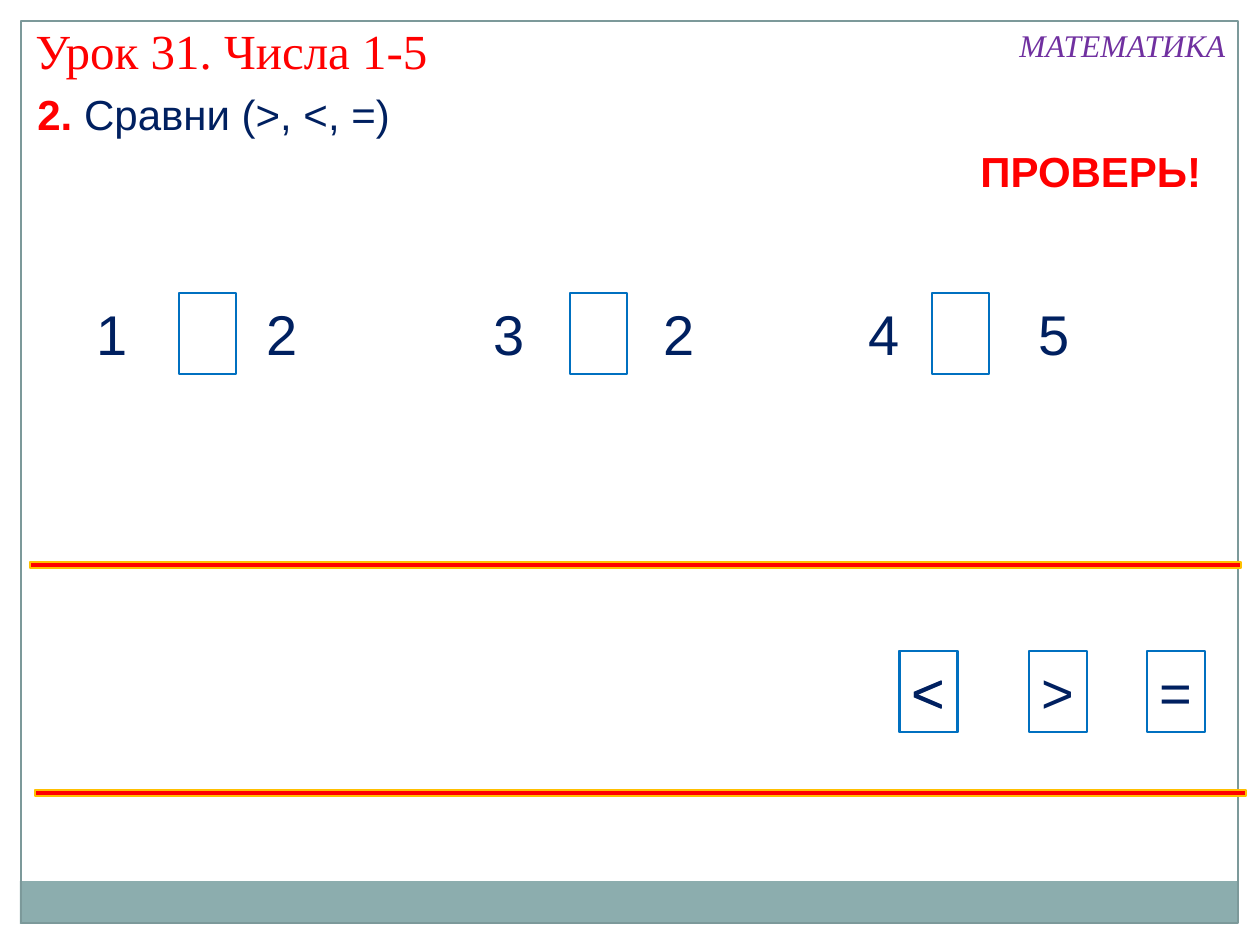
from lxml.etree import SubElement
from pptx import Presentation
from pptx.dml.color import RGBColor
from pptx.enum.shapes import MSO_SHAPE as SHAPE
from pptx.enum.text import MSO_ANCHOR as ANCHOR, PP_ALIGN as ALIGN
from pptx.oxml.ns import qn
from pptx.util import Emu, Pt

PX_PER_INCH = 126
NAVY, RED, BLUE, PURPLE = "002060", "FF0000", "0070C0", "7030A0"
GOLD, WHITE, TEAL, GREY = "FFC000", "FFFFFF", "8CADAE", "7C999A"
SANS, SERIF = "Arial", "Times New Roman"


def px(n):
    return Emu(round(n * 914400 / PX_PER_INCH))


def rgb(color):
    return RGBColor.from_string(color)


class Board:
    """Holds the current slide and the lesson's style."""

    def __init__(self, slide):
        self.shapes = slide.shapes

    def rect(self, x, y, w, h, fill=None, line=None, width=0.75):
        s = self.shapes.add_shape(SHAPE.RECTANGLE, px(x), px(y), px(w), px(h))
        s.shadow.inherit = False
        if fill:
            s.fill.solid()
            s.fill.fore_color.rgb = rgb(fill)
        else:
            s.fill.background()
        if line:
            s.line.color.rgb = rgb(line)
            s.line.width = Pt(width)
        else:
            s.line.fill.background()
        return s

    def label(self, s, text, size, color, font=SANS, bold=False, italic=False, wrap=True):
        tf = s.text_frame
        tf.word_wrap = wrap
        tf.vertical_anchor = ANCHOR.TOP
        p = tf.paragraphs[0]
        p.alignment = ALIGN.LEFT
        p.font.size, p.font.name = Pt(size), font
        p.font.bold, p.font.italic = bold, italic
        p.font.color.rgb = rgb(color)
        p.add_run().text = text
        return p

    def text(self, x, y, w, h, text, size, color, **style):
        s = self.shapes.add_textbox(px(x), px(y), px(w), px(h))
        return self.label(s, text, size, color, **style)

    def pair(self, x, left, right, box_x):
        """Two numbers on a tab stop, with an empty answer box between them."""
        p = self.text(x, 293, 251, 81, left, 32, NAVY)
        props = p._p.get_or_add_pPr()
        tab_list = SubElement(props, qn("a:tabLst"))
        props.insert(0, tab_list)
        SubElement(tab_list, qn("a:tab"), pos=str(px(170)), algn="l")
        p.add_run().text = "\t" + right
        self.rect(box_x, 293, 57, 81, WHITE, BLUE)

    def sign(self, x, sign):
        s = self.rect(x, 651, 58, 81, line=BLUE)
        self.label(s, sign, 32, NAVY, wrap=False)

    def bar(self, x, y):
        self.rect(x, y, 1211, 6, RED, GOLD, 0.9)


def main():
    prs = Presentation()
    prs.slide_width, prs.slide_height = px(1260), px(945)
    board = Board(prs.slides.add_slide(prs.slide_layouts[6]))

    board.rect(20, 881, 1217, 43, TEAL)
    board.rect(21, 21, 1217, 902, line=GREY)

    board.text(23, 14, 427, 72, "Урок 31. Числа 1-5", 28, RED, font=SERIF)
    board.text(1007, 20, 233, 50, "МАТЕМАТИКА", 18, PURPLE,
               font=SERIF, italic=True, wrap=False)
    task = board.text(25, 82, 522, 63, "2. ", 24, NAVY)
    number = task.runs[0].font
    number.bold, number.color.rgb = True, rgb(RED)
    task.add_run().text = "Сравни (>, <, =)"
    board.text(968, 139, 252, 63, "ПРОВЕРЬ!", 24, RED, bold=True)

    for x, left, right, box_x in ((84, "1", "2", 179), (481, "3", "2", 570),
                                  (856, "4", "5", 932)):
        board.pair(x, left, right, box_x)

    for x, y in ((30, 562), (35, 790)):
        board.bar(x, y)

    # Two "<" cards lie stacked, one px apart
    for x, sign in ((1147, "="), (900, "<"), (1029, ">"), (899, "<")):
        board.sign(x, sign)

    prs.save("out.pptx")


if __name__ == "__main__":
    main()
